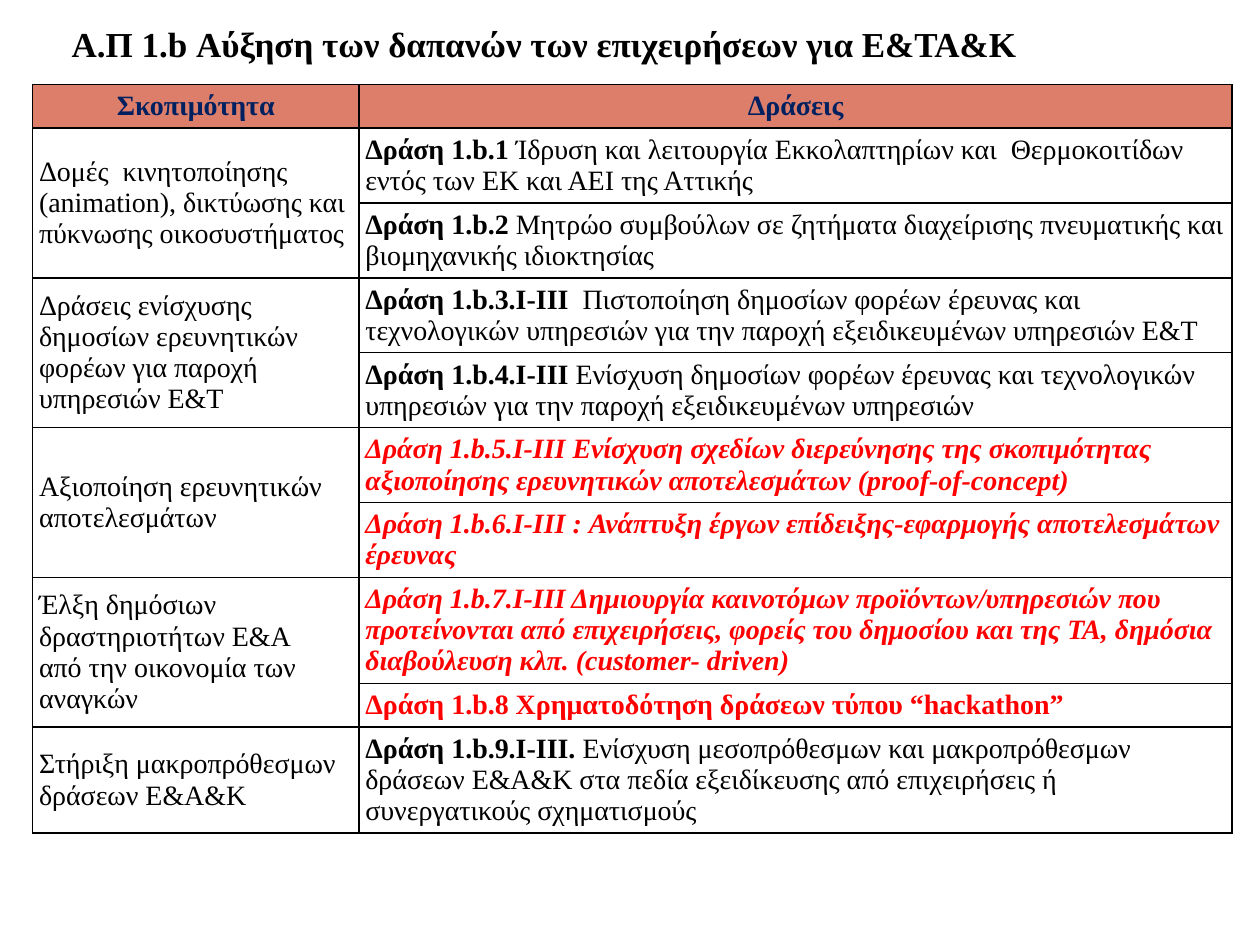
from dataclasses import dataclass

from lxml import etree
from pptx import Presentation
from pptx import util as u
from pptx.dml.color import RGBColor
from pptx.enum import text
from pptx.oxml import ns


@dataclass(frozen=True)
class Theme:
    font: str = "Times New Roman"
    ink: str = "000000"
    navy: str = "002060"
    red: str = "FF0000"
    header: str = "DD7E6B"
    title_size: int = 20
    body_size: int = 16
    inset: float = 0.05
    border: int = 1


class Deck:
    COLS, ROWS = 100, 75

    def __init__(self, theme):
        self.theme = theme
        self.prs = Presentation()
        self.prs.slide_width, self.prs.slide_height = u.Inches(10), u.Inches(7.5)
        self.s = self.prs.slides.add_slide(self.prs.slide_layouts[6])

    def x(self, cols):
        return round(self.prs.slide_width * cols / self.COLS)

    def y(self, rows):
        return round(self.prs.slide_height * rows / self.ROWS)

    def run(self, p, words, size, color, bold=False, italic=False):
        r = p.add_run()
        r.text = words
        r.font.name, r.font.size = self.theme.font, u.Pt(size)
        r.font.bold, r.font.italic = bold, italic
        r.font.color.rgb = RGBColor.from_string(color)

    def title(self, words, left, top, width, height):
        sp = self.s.shapes.add_textbox(self.x(left), self.y(top), self.x(width), self.y(height))
        tf = sp.text_frame
        tf.word_wrap = True
        tf.auto_size = text.MSO_AUTO_SIZE.SHAPE_TO_FIT_TEXT
        self.run(tf.paragraphs[0], words, self.theme.title_size, self.theme.ink, True)

    def table(self, left, top, widths, heights):
        frame = self.s.shapes.add_table(
            len(heights), len(widths), self.x(left), self.y(top),
            self.x(sum(widths)), self.y(sum(heights)))
        tbl = frame.table
        tbl.first_row = tbl.horz_banding = False
        for col, width in zip(tbl.columns, widths):
            col.width = self.x(width)
        for row, height in zip(tbl.rows, heights):
            row.height = self.y(height)
        for cell in tbl.iter_cells():
            self.frame_cell(cell)
        return tbl

    def frame_cell(self, cell):
        pr = cell._tc.get_or_add_tcPr()
        for side in ("lnL", "lnR", "lnT", "lnB"):
            ln = etree.SubElement(pr, ns.qn(f"a:{side}"), w=str(u.Pt(self.theme.border)))
            fill = etree.SubElement(ln, ns.qn("a:solidFill"))
            etree.SubElement(fill, ns.qn("a:srgbClr"), val=self.theme.ink)
        cell.fill.background()
        cell.vertical_anchor = text.MSO_ANCHOR.MIDDLE
        cell.margin_left = cell.margin_right = u.Inches(self.theme.inset)
        cell.margin_top = cell.margin_bottom = u.Inches(self.theme.inset)

    def header(self, cell, words):
        cell.fill.solid()
        cell.fill.fore_color.rgb = RGBColor.from_string(self.theme.header)
        p = cell.text_frame.paragraphs[0]
        p.alignment = text.PP_ALIGN.CENTER
        self.run(p, words, self.theme.body_size, self.theme.navy, True)

    def purpose(self, cell, lines):
        tf = cell.text_frame
        for i, line in enumerate(lines):
            p = tf.add_paragraph() if i else tf.paragraphs[0]
            self.run(p, line, self.theme.body_size, self.theme.ink)

    def action(self, cell, code, words):
        p = cell.text_frame.paragraphs[0]
        self.run(p, code, self.theme.body_size, self.theme.ink, True)
        self.run(p, words, self.theme.body_size, self.theme.ink)

    def highlight(self, cell, words, italic=True):
        self.run(cell.text_frame.paragraphs[0], words, self.theme.body_size,
                 self.theme.red, True, italic)


HEADERS = ["Σκοπιμότητα", "Δράσεις"]
WIDTHS = [25.9, 69.3]
HEIGHTS = [3.3] + [5.1] * 6 + [7.1, 3.1, 6.5]

GROUPS = [
    (["Δομές  κινητοποίησης (animation), δικτύωσης και πύκνωσης οικοσυστήματος"], [
        (Deck.action, "Δράση 1.b.1 ",
         "Ίδρυση και λειτουργία Εκκολαπτηρίων και  Θερμοκοιτίδων εντός των ΕΚ και ΑΕΙ της Αττικής"),
        (Deck.action, "Δράση 1.b.2 ",
         "Μητρώο συμβούλων σε ζητήματα διαχείρισης πνευματικής και βιομηχανικής ιδιοκτησίας"),
    ]),
    (["Δράσεις ενίσχυσης δημοσίων ερευνητικών φορέων για παροχή υπηρεσιών Ε&Τ"], [
        (Deck.action, "Δράση 1.b.3.Ι-ΙΙΙ  ",
         "Πιστοποίηση δημοσίων φορέων έρευνας και τεχνολογικών υπηρεσιών "
         "για την παροχή εξειδικευμένων υπηρεσιών Ε&Τ"),
        (Deck.action, "Δράση 1.b.4.Ι-ΙΙΙ ",
         "Ενίσχυση δημοσίων φορέων έρευνας και τεχνολογικών υπηρεσιών "
         "για την παροχή εξειδικευμένων υπηρεσιών"),
    ]),
    (["Aξιοποίηση ερευνητικών ", "αποτελεσμάτων"], [
        (Deck.highlight,
         "Δράση 1.b.5.Ι-ΙΙΙ Ενίσχυση σχεδίων διερεύνησης της σκοπιμότητας "
         "αξιοποίησης ερευνητικών αποτελεσμάτων (proof-of-concept)"),
        (Deck.highlight,
         "Δράση 1.b.6.I-III : Ανάπτυξη έργων επίδειξης-εφαρμογής αποτελεσμάτων έρευνας"),
    ]),
    (["Έλξη δημόσιων δραστηριοτήτων Ε&Α", "από την οικονομία των αναγκών"], [
        (Deck.highlight,
         "Δράση 1.b.7.Ι-ΙΙΙ Δημιουργία καινοτόμων προϊόντων/υπηρεσιών που "
         "προτείνονται από επιχειρήσεις, φορείς του δημοσίου και της ΤΑ, "
         "δημόσια διαβούλευση κλπ. (customer- driven)"),
        (Deck.highlight, "Δράση 1.b.8 Χρηματοδότηση δράσεων τύπου “hackathon”", False),
    ]),
    (["Στήριξη μακροπρόθεσμων δράσεων Ε&Α&Κ"], [
        (Deck.action, "Δράση 1.b.9.Ι-ΙΙΙ.",
         " Ενίσχυση μεσοπρόθεσμων και μακροπρόθεσμων δράσεων Ε&Α&Κ "
         "στα πεδία εξειδίκευσης από επιχειρήσεις ή συνεργατικούς σχηματισμούς"),
    ]),
]


def main():
    deck = Deck(Theme())
    tbl = deck.table(2.6, 6.7, WIDTHS, HEIGHTS)
    for col, words in enumerate(HEADERS):
        deck.header(tbl.cell(0, col), words)
    row = 1
    for lines, actions in GROUPS:
        first = tbl.cell(row, 0)
        if len(actions) > 1:
            first.merge(tbl.cell(row + len(actions) - 1, 0))
        deck.purpose(first, lines)
        for write, *words in actions:
            write(deck, tbl.cell(row, 1), *words)
            row += 1
    deck.title("Α.Π 1.b Αύξηση των δαπανών των επιχειρήσεων για Ε&ΤΑ&Κ", 4.7, 1.3, 93.2, 4.4)
    deck.prs.save("out.pptx")


if __name__ == "__main__":
    main()
